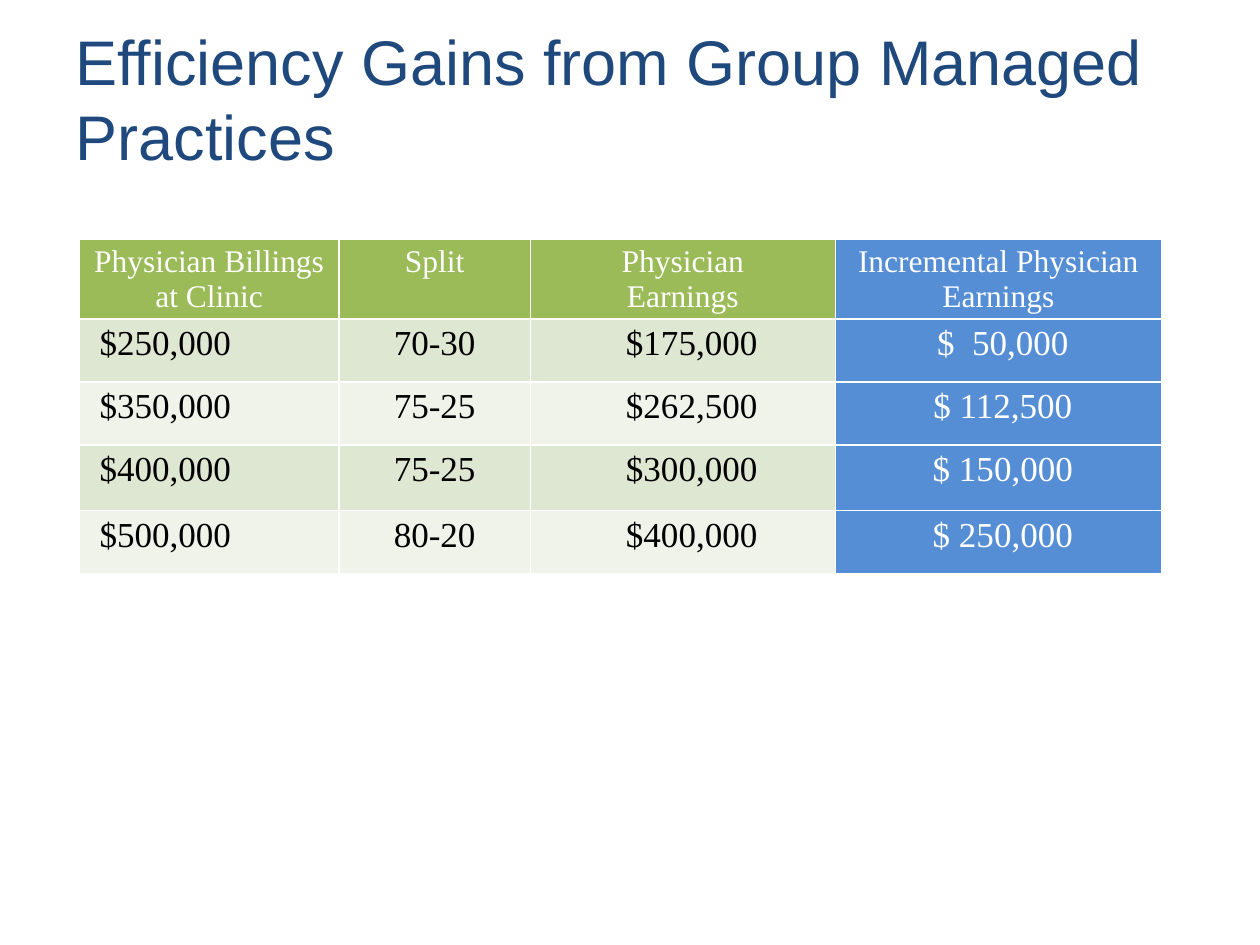
from dataclasses import dataclass

from lxml import etree
from pptx import Presentation
from pptx import util as u
from pptx.dml.color import RGBColor
from pptx.enum import text
from pptx.oxml import ns

NAVY = RGBColor(0x1F, 0x49, 0x7D)
GREEN = RGBColor(0x9B, 0xBB, 0x59)
BLUE = RGBColor(0x55, 0x8E, 0xD5)
DARK_BAND = RGBColor(0xDE, 0xE7, 0xD1)
LIGHT_BAND = RGBColor(0xEF, 0xF3, 0xEA)
WHITE = RGBColor(0xFF, 0xFF, 0xFF)
BLACK = RGBColor(0x00, 0x00, 0x00)


@dataclass(frozen=True)
class Column:
    heading: str
    values: tuple[str, ...]
    width: float
    left_margin: float = 0.07
    alignment: text.PP_ALIGN = text.PP_ALIGN.CENTER
    highlighted: bool = False


COLUMNS = (
    Column("Physician Billings at Clinic",
           ("$250,000", "$350,000", "$400,000", "$500,000"),
           2.06, left_margin=0.16, alignment=text.PP_ALIGN.LEFT),
    Column("Split", ("70-30", "75-25", "75-25", "80-20"), 1.52),
    Column("Physician\nEarnings",
           ("$175,000", "$262,500", "$300,000", "$400,000"),
           2.42, left_margin=0.21),
    Column("Incremental Physician Earnings",
           ("$  50,000", "$ 112,500", "$ 150,000", "$ 250,000"),
           2.59, left_margin=0.14, highlighted=True),
)
ROW_HEIGHTS = (0.63, 0.5, 0.5, 0.52, 0.5)


def add_title(slide, wording: str) -> None:
    title = slide.shapes.title
    title.left, title.top = u.Inches(0.5), u.Inches(0.15)
    title.width, title.height = u.Inches(9), u.Inches(1.25)
    frame = title.text_frame
    frame.text = wording
    frame.word_wrap = True
    frame.auto_size = text.MSO_AUTO_SIZE.NONE
    frame.vertical_anchor = text.MSO_ANCHOR.MIDDLE
    paragraph = frame.paragraphs[0]
    paragraph.alignment = text.PP_ALIGN.LEFT
    font = paragraph.runs[0].font
    font.name, font.size = "Arial", u.Pt(36)
    font.color.rgb = NAVY


def set_borders(cell) -> None:
    properties = cell._tc.get_or_add_tcPr()
    for side in "LRTB":
        line = etree.SubElement(properties, ns.qn(f"a:ln{side}"), w=str(u.Pt(1)))
        fill = etree.SubElement(line, ns.qn("a:solidFill"))
        etree.SubElement(fill, ns.qn("a:srgbClr"), val=str(WHITE))


def fill_cell(cell, column: Column, row: int) -> None:
    is_heading = row == 0
    set_borders(cell)
    band = GREEN if is_heading else DARK_BAND if row % 2 else LIGHT_BAND
    cell.fill.solid()
    cell.fill.fore_color.rgb = BLUE if column.highlighted else band
    cell.margin_left = u.Inches(0.07 if is_heading else column.left_margin)
    cell.margin_right = u.Inches(0.07)
    cell.margin_top = cell.margin_bottom = u.Inches(0.04)
    cell.text_frame.text = column.heading if is_heading else column.values[row - 1]
    for paragraph in cell.text_frame.paragraphs:
        paragraph.alignment = text.PP_ALIGN.CENTER if is_heading else column.alignment
        font = paragraph.runs[0].font
        font.name = "Times New Roman"
        font.size = u.Pt(18 if is_heading else 20)
        font.bold = False
        font.color.rgb = WHITE if is_heading or column.highlighted else BLACK


def add_earnings_table(slide) -> None:
    width = sum(column.width for column in COLUMNS)
    table = slide.shapes.add_table(
        len(ROW_HEIGHTS), len(COLUMNS), u.Inches(0.63), u.Inches(1.9),
        u.Inches(width), u.Inches(sum(ROW_HEIGHTS))).table
    for row, height in enumerate(ROW_HEIGHTS):
        table.rows[row].height = u.Inches(height)
    for index, column in enumerate(COLUMNS):
        table.columns[index].width = u.Inches(column.width)
        for row in range(len(ROW_HEIGHTS)):
            fill_cell(table.cell(row, index), column, row)


def main() -> None:
    presentation = Presentation()
    presentation.slide_width = u.Inches(10)
    presentation.slide_height = u.Inches(7.5)
    slide = presentation.slides.add_slide(presentation.slide_layouts[5])
    add_title(slide, "Efficiency Gains from Group Managed Practices")
    add_earnings_table(slide)
    presentation.save("out.pptx")


if __name__ == "__main__":
    main()
